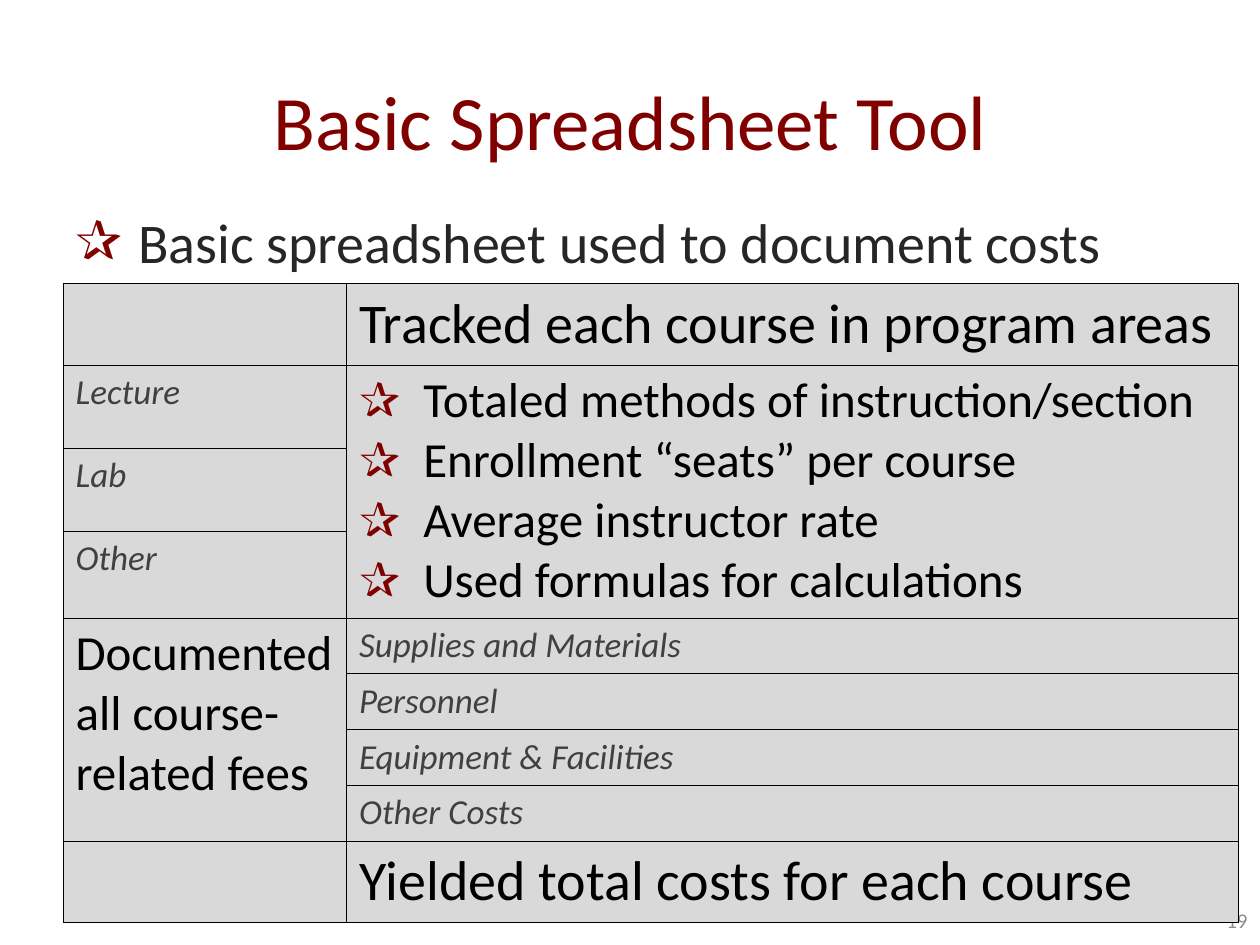
from lxml import etree
from pptx import Presentation
from pptx import util as u
from pptx.dml.color import RGBColor
from pptx.enum import text
from pptx.oxml.ns import qn

W, H = u.Inches(10), u.Inches(7.5)
FONT = "Calibri"
COLORS = {"accent": "800000", "body": "262626", "number": "8C8C8C",
          "cell": "D9D9D9", "line": "000000", "strong": "000000",
          "detail": "404040"}

# Column and row sizes as shares of the slide's width and height
COLS = [0.225, 0.708]
ROWS = [0.086] + [0.088] * 2 + [0.092] + [0.059] * 4 + [0.086]

# Text size, colour name and italic of each level of text in the table
STYLES = {"heading": (32, "strong", False),
          "point": (28, "strong", False),
          "detail": (20, "detail", True)}

# (row, column, row span, style, lines, bulleted)
CELLS = [
    (0, 1, 1, "heading", ["Tracked each course in program areas"], False),
    (1, 0, 1, "detail", ["Lecture"], False),
    (2, 0, 1, "detail", ["Lab"], False),
    (3, 0, 1, "detail", ["Other"], False),
    (1, 1, 3, "point", ["Totaled methods of instruction/section",
                        "Enrollment “seats” per course",
                        "Average instructor rate",
                        "Used formulas for calculations"], True),
    (4, 0, 4, "point", ["Documented all course-related fees"], False),
    (4, 1, 1, "detail", ["Supplies and Materials"], False),
    (5, 1, 1, "detail", ["Personnel"], False),
    (6, 1, 1, "detail", ["Equipment & Facilities"], False),
    (7, 1, 1, "detail", ["Other Costs"], False),
    (8, 1, 1, "heading", ["Yielded total costs for each course"], False),
]


def rgb(name):
    return RGBColor.from_string(COLORS[name])


def star_bullet(p, indent):
    """Give the paragraph a star bullet with a hanging indent in inches."""
    pPr = p._p.get_or_add_pPr()
    pPr.set("marL", str(u.Inches(indent)))
    pPr.set("indent", str(-u.Inches(indent)))
    color = etree.SubElement(pPr, qn("a:buClr"))
    etree.SubElement(color, qn("a:srgbClr"), val=COLORS["accent"])
    etree.SubElement(pPr, qn("a:buFont"), typeface=FONT)
    etree.SubElement(pPr, qn("a:buChar"), char="✰")


def fill_text(tf, lines, size, color, italic=False, align=None, bullet=None):
    tf.text = "\n".join(lines)
    for p in tf.paragraphs:
        if bullet:
            star_bullet(p, bullet)
        p.alignment = align
        for r in p.runs:
            r.font.name = FONT
            r.font.size = u.Pt(size)
            r.font.italic = italic
            r.font.color.rgb = rgb(color)


def add_text(s, box, line, size, color, anchor=text.MSO_ANCHOR.MIDDLE, **style):
    """Add a one-line text box; box is given as shares of the slide's size."""
    x, y, w, h = box
    sp = s.shapes.add_textbox(int(x * W), int(y * H), int(w * W), int(h * H))
    tf = sp.text_frame
    tf.word_wrap = True
    tf.vertical_anchor = anchor
    fill_text(tf, [line], size, color, **style)


def format_cell(cell):
    """Give the cell its fill and a thin line on all four sides."""
    cell.fill.solid()
    cell.fill.fore_color.rgb = rgb("cell")
    tcPr = cell._tc.get_or_add_tcPr()
    for i, side in enumerate(("a:lnL", "a:lnR", "a:lnT", "a:lnB")):
        ln = etree.Element(qn(side), w=str(u.Pt(0.25)))
        fill = etree.SubElement(ln, qn("a:solidFill"))
        etree.SubElement(fill, qn("a:srgbClr"), val=COLORS["line"])
        tcPr.insert(i, ln)


def add_cost_table(s, x, y):
    frame = s.shapes.add_table(len(ROWS), len(COLS), int(x * W), int(y * H),
                               int(sum(COLS) * W), int(sum(ROWS) * H))
    table = frame.table
    table.first_row = table.horz_banding = False
    for column, share in zip(table.columns, COLS):
        column.width = int(share * W)
    for row, share in zip(table.rows, ROWS):
        row.height = int(share * H)
    for cell in table.iter_cells():
        format_cell(cell)
    for row, col, span, style, lines, bulleted in CELLS:
        cell = table.cell(row, col)
        if span > 1:
            cell.merge(table.cell(row + span - 1, col))
        size, color, italic = STYLES[style]
        fill_text(cell.text_frame, lines, size, color, italic,
                  bullet=0.51 if bulleted else None)


def main():
    prs = Presentation()
    prs.slide_width, prs.slide_height = W, H
    s = prs.slides.add_slide(prs.slide_layouts[6])
    add_text(s, (0.017, 0.043, 0.967, 0.167), "Basic Spreadsheet Tool", 44,
             "accent", align=text.PP_ALIGN.CENTER)
    add_text(s, (0.05, 0.213, 0.95, 0.167),
             "Basic spreadsheet used to document costs", 32, "body",
             anchor=text.MSO_ANCHOR.TOP, bullet=0.5)
    add_text(s, (0.917, 0.947, 0.083, 0.053), "19", 12, "number",
             align=text.PP_ALIGN.RIGHT)
    add_cost_table(s, 0.05, 0.3)
    prs.save("out.pptx")


if __name__ == "__main__":
    main()
